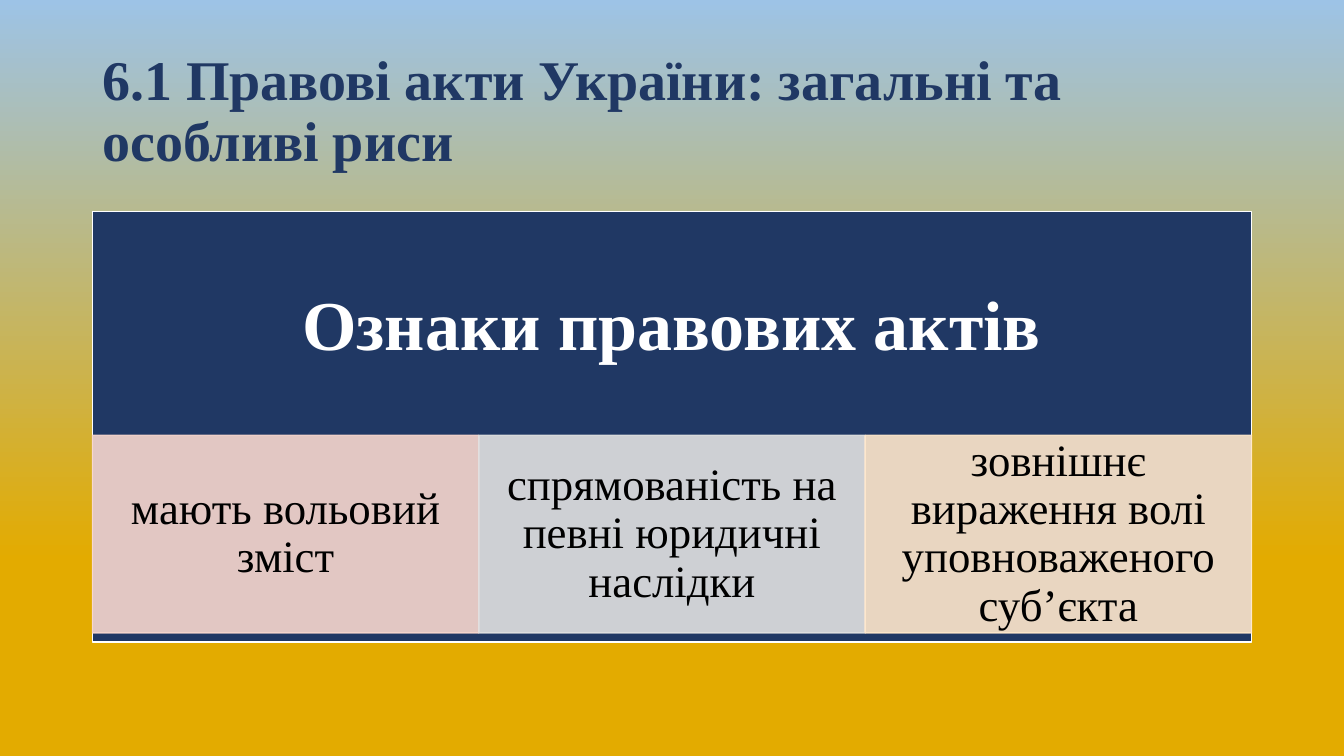
from lxml.etree import SubElement
from pptx import Presentation
from pptx.dml.color import RGBColor
from pptx.enum.shapes import MSO_SHAPE
from pptx.enum.text import MSO_ANCHOR, PP_ALIGN
from pptx.oxml.ns import qn
from pptx.util import Cm, Pt

TITLE = "6.1 Правові акти України: загальні та особливі риси"
HEADING = "Ознаки правових актів"
FEATURES = [
    ("мають вольовий зміст", "rose"),
    ("спрямованість на певні юридичні наслідки", "grey"),
    ("зовнішнє вираження волі уповноваженого суб’єкта", "sand"),
]
COLOURS = {
    "sky": "9DC3E6", "gold": "E3AB00", "navy": "203864",
    "white": "FFFFFF", "black": "000000",
    "rose": "F8D7CE", "grey": "E1E1E1", "sand": "FFE8CC",
}
FONT = "Times New Roman"
FEATURE_OPACITY = 90

LEFT, WIDTH = 2.33, 29.21
TITLE_TOP, TITLE_HEIGHT = 1.01, 3.68
PANEL_TOP, PANEL_HEIGHT = 5.33, 10.85
HEADING_HEIGHT = 5.87
FEATURE_TOP, FEATURE_HEIGHT = 10.97, 4.98


def colour(name):
    return RGBColor.from_string(COLOURS[name])


def write(shape, text, size, colour_name, insets, align, bold=False):
    """Set the text; insets are left, top, right and bottom in cm."""
    frame = shape.text_frame
    frame.word_wrap = True
    frame.vertical_anchor = MSO_ANCHOR.MIDDLE
    (frame.margin_left, frame.margin_top,
     frame.margin_right, frame.margin_bottom) = map(Cm, insets)
    frame.text = text
    paragraph = frame.paragraphs[0]
    paragraph.alignment = align
    paragraph.line_spacing = 0.9
    font = paragraph.runs[0].font
    font.name, font.size, font.bold = FONT, Pt(size), bold
    font.color.rgb = colour(colour_name)


def add_box(slide, left, top, width, height, fill, line, opacity=100):
    box = slide.shapes.add_shape(
        MSO_SHAPE.RECTANGLE, Cm(left), Cm(top), Cm(width), Cm(height))
    box.shadow.inherit = False
    box.fill.solid()
    box.fill.fore_color.rgb = colour(fill)
    box.line.color.rgb = colour(line)
    box.line.width = Pt(1)
    if opacity < 100:
        for rgb in box.element.spPr.iter(qn("a:srgbClr")):
            SubElement(rgb, qn("a:alpha"), val=str(opacity * 1000))
    return box


def paint_background(slide):
    fill = slide.background.fill
    fill.gradient()
    fill.gradient_angle = 90
    for stop, position, name in zip(
            fill.gradient_stops, (0.26, 1), ("gold", "sky")):
        stop.position = position
        stop.color.rgb = colour(name)


def main():
    presentation = Presentation()
    presentation.slide_width, presentation.slide_height = Cm(33.87), Cm(19.05)
    slide = presentation.slides.add_slide(presentation.slide_layouts[6])
    paint_background(slide)

    title = slide.shapes.add_textbox(
        Cm(LEFT), Cm(TITLE_TOP), Cm(WIDTH), Cm(TITLE_HEIGHT))
    write(title, TITLE, 40, "navy", (0.25, 0.13, 0.25, 0.13),
          PP_ALIGN.LEFT, bold=True)

    panel = add_box(slide, LEFT, PANEL_TOP, WIDTH, PANEL_HEIGHT,
                    "navy", "white")
    below_heading = PANEL_HEIGHT - HEADING_HEIGHT
    write(panel, HEADING, 50, "white", (1, 1, 1, 1 + below_heading),
          PP_ALIGN.CENTER, bold=True)

    feature_width = WIDTH / len(FEATURES)
    for index, (text, fill) in enumerate(FEATURES):
        feature = add_box(slide, LEFT + index * feature_width, FEATURE_TOP,
                          feature_width, FEATURE_HEIGHT, fill, fill,
                          FEATURE_OPACITY)
        write(feature, text, 32, "black", (0.63, 0.1, 0.63, 0.1),
              PP_ALIGN.CENTER)

    presentation.save("out.pptx")


if __name__ == "__main__":
    main()
